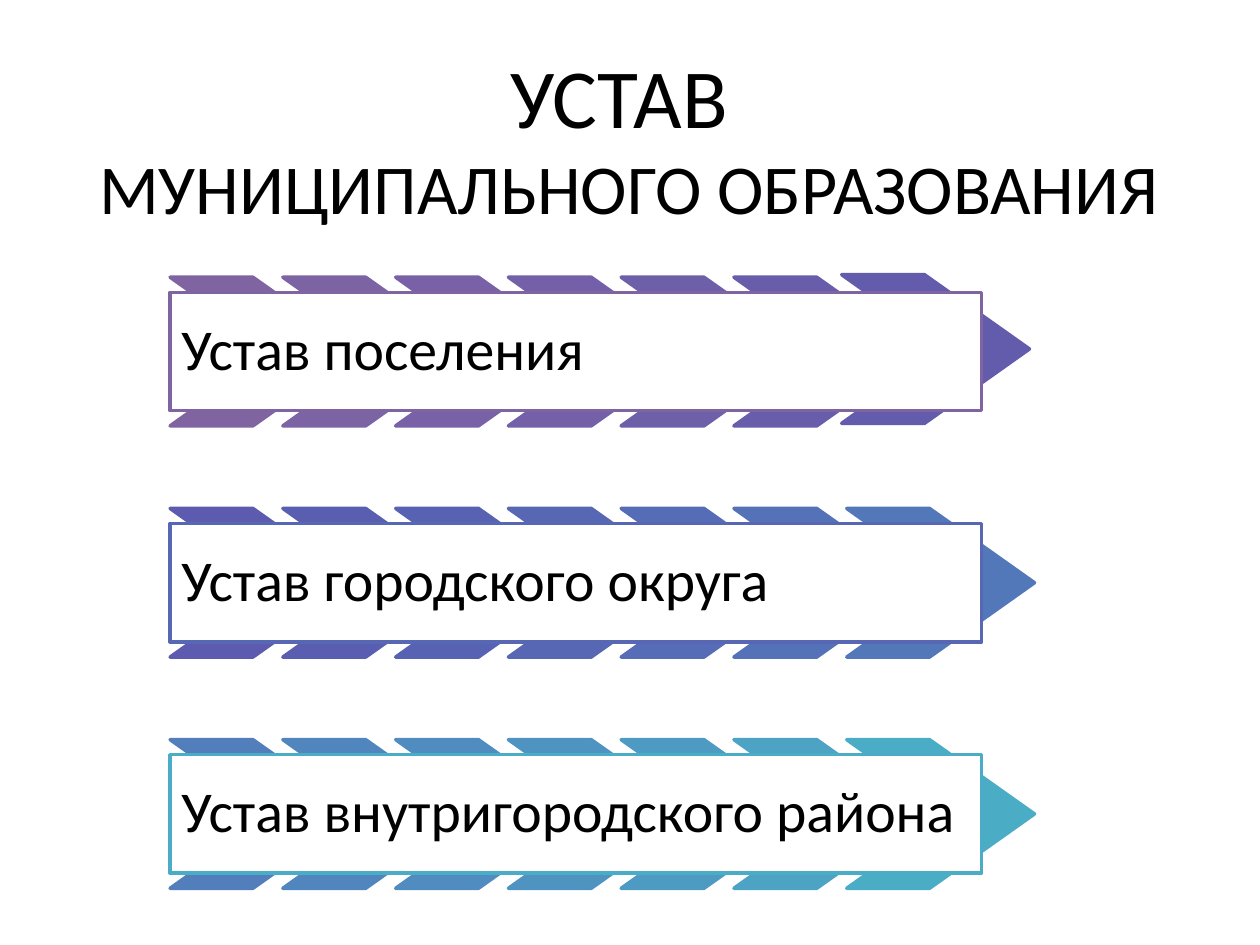
from pptx import Presentation
from pptx.dml.color import RGBColor
from pptx.enum.shapes import MSO_SHAPE
from pptx.enum.text import MSO_ANCHOR, MSO_AUTO_SIZE, PP_ALIGN
from pptx.util import Inches, Pt

CHEVRON, RECTANGLE = MSO_SHAPE.CHEVRON, MSO_SHAPE.RECTANGLE
TOP, MIDDLE = MSO_ANCHOR.TOP, MSO_ANCHOR.MIDDLE
LEFT, CENTER = PP_ALIGN.LEFT, PP_ALIGN.CENTER
NO_AUTOFIT = MSO_AUTO_SIZE.NONE

FONT = "Calibri"
TITLE_ONLY_LAYOUT = 5
ROW_LEFT, FIRST_ROW_TOP, ROW_STEP = 1.35, 2.2, 1.835
CHEVRON_STEP, CHEVRON_SIZE = 0.895, (1.49, 1.18)
LABEL_DROP, LABEL_SIZE = 0.12, (6.44, 0.94)
LAST_SHIFT = (-0.04, -0.02)

TITLE_LINES = [("УСТАВ ", 48), ("МУНИЦИПАЛЬНОГО ОБРАЗОВАНИЯ", 40)]
ROWS = [
    ("Устав поселения", "8064A2", LAST_SHIFT,
     ["8064A2", "7C63A4", "7861A6", "7360A8", "6E5FA9", "685DAB", "635CAD"]),
    ("Устав городского округа", "5767B4", (0, 0),
     ["5C5BAF", "5A5EB1", "5862B3", "5767B4", "566CB6", "5572B8", "5378BA"]),
    ("Устав внутригородского района", "4BACC6", (0, 0),
     ["527EBC", "5185BD", "508CBF", "4F93C1", "4D9BC3", "4CA3C4", "4BACC6"]),
]


def color(hex_value):
    """Turn a hex string into a colour."""
    return RGBColor.from_string(hex_value)


def add_span(para, text, size):
    """Add one black run of text to a paragraph."""
    span = para.add_run()
    span.text = text
    span.font.name = FONT
    span.font.size = Pt(size)
    span.font.color.rgb = color("000000")


def add_title(page):
    """Place the two-line title in its placeholder."""
    title = page.shapes.title
    title.left, title.top = Inches(0.28), Inches(0.3)
    title.width, title.height = Inches(9.42), Inches(1.58)
    frame = title.text_frame
    frame.word_wrap = True
    frame.auto_size = NO_AUTOFIT
    frame.vertical_anchor = TOP
    for index, (text, size) in enumerate(TITLE_LINES):
        para = frame.add_paragraph() if index else frame.paragraphs[0]
        para.alignment = CENTER
        add_span(para, text, size)


def add_box(page, kind, left, top, size, fill, line):
    """Add a filled and outlined preset shape."""
    width, height = size
    box = page.shapes.add_shape(
        kind, Inches(left), Inches(top), Inches(width), Inches(height))
    box.shadow.inherit = False
    box.fill.solid()
    box.fill.fore_color.rgb = color(fill)
    box.line.color.rgb = color(line)
    box.line.width = Pt(2)
    return box


def add_label(page, text, top, line):
    """Add the white text box that lies over a row of chevrons."""
    label = add_box(page, RECTANGLE, ROW_LEFT, top, LABEL_SIZE, "FFFFFF", line)
    frame = label.text_frame
    frame.word_wrap = True
    frame.vertical_anchor = MIDDLE
    frame.margin_left = frame.margin_right = Inches(0.09)
    frame.margin_top = frame.margin_bottom = Inches(0.09)
    para = frame.paragraphs[0]
    para.alignment = LEFT
    para.line_spacing = 0.9
    add_span(para, text, 33)


def add_row(page, top, text, line, last_shift, shades):
    """Add a row of shaded chevrons with its label."""
    for index, shade in enumerate(shades):
        is_last = index == len(shades) - 1
        shift_x, shift_y = last_shift if is_last else (0, 0)
        left = ROW_LEFT + index * CHEVRON_STEP + shift_x
        chevron = add_box(
            page, CHEVRON, left, top + shift_y, CHEVRON_SIZE, shade, shade)
        chevron.adjustments[0] = 0.706
    add_label(page, text, top + LABEL_DROP, line)


def main():
    """Build the slide and save the deck."""
    deck = Presentation()
    deck.slide_width, deck.slide_height = Inches(10), Inches(7.5)
    page = deck.slides.add_slide(deck.slide_layouts[TITLE_ONLY_LAYOUT])
    add_title(page)
    for index, row in enumerate(ROWS):
        add_row(page, FIRST_ROW_TOP + index * ROW_STEP, *row)
    deck.save("out.pptx")


if __name__ == "__main__":
    main()
